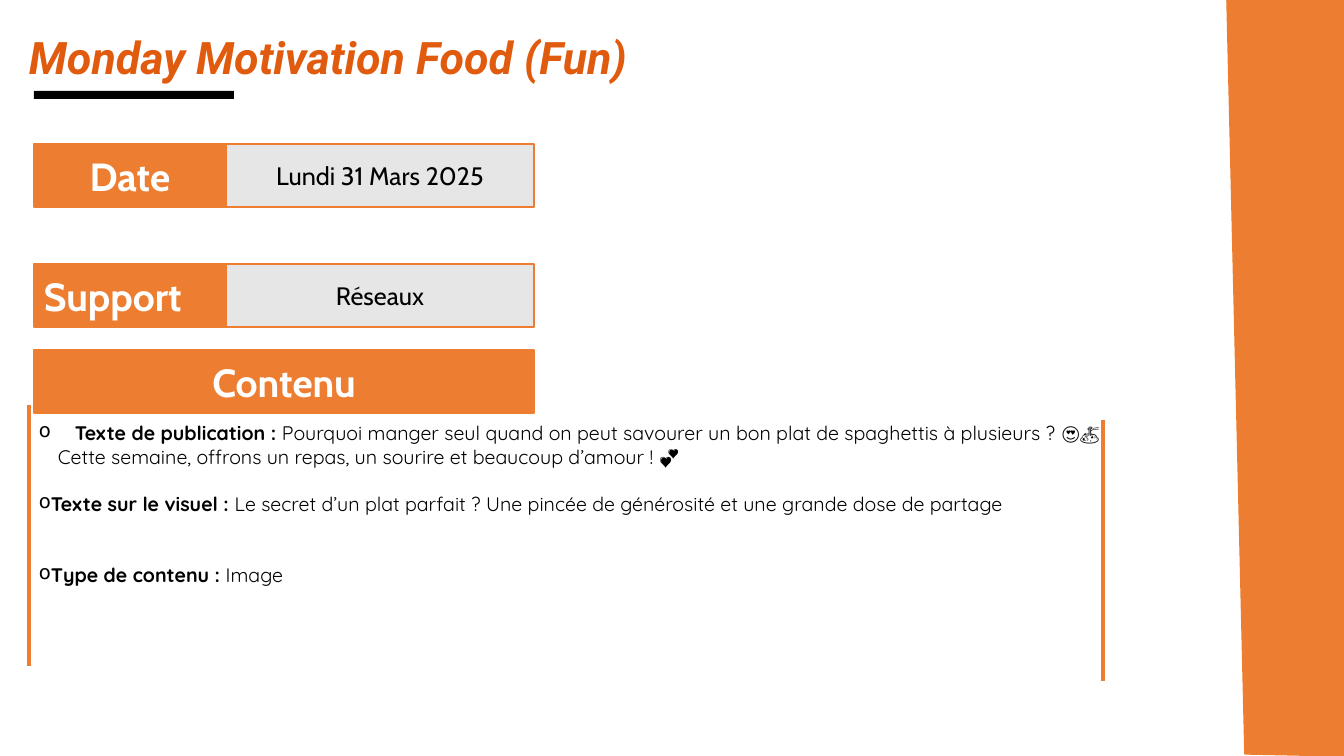
from lxml import etree
from pptx import Presentation
from pptx.dml.color import RGBColor
from pptx.enum.shapes import MSO_CONNECTOR, MSO_SHAPE
from pptx.enum.text import MSO_ANCHOR, PP_ALIGN
from pptx.oxml.ns import qn
from pptx.util import Emu, Pt

PX = 914400 / 100.8
SLIDE_W, SLIDE_H = 1344, 756

ORANGE = RGBColor(0xED, 0x7D, 0x31)
TITLE_ORANGE = RGBColor(0xE1, 0x5B, 0x0F)
GREY = RGBColor(0xE7, 0xE6, 0xE6)
BLACK = RGBColor(0, 0, 0)
WHITE = RGBColor(0xFF, 0xFF, 0xFF)

LEFT, CENTER, JUSTIFY = PP_ALIGN.LEFT, PP_ALIGN.CENTER, PP_ALIGN.JUSTIFY
MIDDLE = MSO_ANCHOR.MIDDLE
RECTANGLE, STRAIGHT = MSO_SHAPE.RECTANGLE, MSO_CONNECTOR.STRAIGHT

LABEL_W, VALUE_W, FIELD_H = 192, 308, 63

# bold lead, text, bullet, left indent (px), space before (pt)
CONTENT = [
    ("Texte de publication : ",
     "Pourquoi manger seul quand on peut savourer un bon plat de spaghettis à plusieurs ? 😍🍝",
     True, 36, 0),
    ("", "Cette semaine, offrons un repas, un sourire et beaucoup d’amour ! 💕",
     False, 19, 0),
    ("Texte sur le visuel : ",
     "Le secret d’un plat parfait ? Une pincée de générosité et une grande dose de partage",
     True, 12, 17),
    ("Type de contenu :", " Image", True, 12, 34),
]


def px(length):
    return Emu(round(length * PX))


def add_text(paragraph, text, *, font, size, color=BLACK, bold=False,
             italic=False, align=LEFT):
    paragraph.alignment = align
    run = paragraph.add_run()
    run.text = text
    run.font.name = font
    run.font.size = Pt(size)
    run.font.color.rgb = color
    run.font.bold = bold
    run.font.italic = italic


def add_bar(slide, x, y, w, h, fill, outline=None):
    bar = slide.shapes.add_shape(RECTANGLE, px(x), px(y), px(w), px(h))
    bar.shadow.inherit = False
    bar.fill.solid()
    bar.fill.fore_color.rgb = fill
    if outline is None:
        bar.line.fill.background()
    else:
        bar.line.color.rgb = outline
        bar.line.width = Pt(1)
    bar.text_frame.vertical_anchor = MIDDLE
    return bar.text_frame


def add_text_area(slide, x, y, w, h):
    frame = slide.shapes.add_textbox(px(x), px(y), px(w), px(h)).text_frame
    frame.word_wrap = True
    return frame


def add_label(slide, x, y, w, text, align=CENTER):
    frame = add_bar(slide, x, y, w, FIELD_H, ORANGE, ORANGE)
    add_text(frame.paragraphs[0], text, font="Cabin", size=28, color=WHITE,
             bold=True, align=align)


def add_field(slide, x, y, label, value, label_align=CENTER):
    """Orange label with its grey value to the right."""
    add_label(slide, x, y, LABEL_W, label, label_align)
    frame = add_bar(slide, x + LABEL_W, y, VALUE_W, FIELD_H, GREY, ORANGE)
    add_text(frame.paragraphs[0], value, font="Cabin", size=18, align=CENTER)


def add_side_band(slide, x, y, w, h):
    """Slanted band along the right edge."""
    builder = slide.shapes.build_freeform(x, y, scale=PX)
    builder.add_line_segments([(x + w, y), (x + w, y + h), (x + 18, y + h - 2)])
    band = builder.convert_to_shape()
    band.shadow.inherit = False
    band.fill.solid()
    band.fill.fore_color.rgb = ORANGE
    band.line.color.rgb = ORANGE
    band.line.width = Pt(1)


def add_title(slide, x, y, w, h):
    frame = add_text_area(slide, x, y, w, h)
    add_text(frame.paragraphs[0], "Monday Motivation Food (Fun)", font="Roboto",
             size=32, color=TITLE_ORANGE, bold=True, italic=True, align=JUSTIFY)
    add_bar(slide, x + 15, y + 66, 200, 8, BLACK)


def add_rule(slide, x, y, h):
    rule = slide.shapes.add_connector(STRAIGHT, px(x), px(y), px(x), px(y + h))
    rule.line.color.rgb = ORANGE
    rule.line.width = Pt(2.25)
    etree.SubElement(rule._element.spPr, qn("a:effectLst"))


def set_indent(paragraph, indent, bullet):
    properties = paragraph._p.get_or_add_pPr()
    properties.set("marL", str(px(indent)))
    properties.set("indent", str(-px(indent) if bullet else 0))
    if bullet:
        etree.SubElement(properties, qn("a:buChar")).set("char", "o")


def add_content(slide, x, y, w, h):
    """Bulleted content between two vertical rules."""
    add_rule(slide, x, y - 11, 261)
    add_rule(slide, x + 1074, y + 4, 261)
    frame = add_text_area(slide, x, y, w, h)
    for i, (lead, text, bullet, indent, gap) in enumerate(CONTENT):
        paragraph = frame.add_paragraph() if i else frame.paragraphs[0]
        set_indent(paragraph, indent, bullet)
        if gap:
            paragraph.space_before = Pt(gap)
        if lead:
            add_text(paragraph, lead, font="Quicksand", size=14, bold=True)
        add_text(paragraph, text, font="Quicksand", size=14)


def main():
    prs = Presentation()
    prs.slide_width, prs.slide_height = px(SLIDE_W), px(SLIDE_H)
    slide = prs.slides.add_slide(prs.slide_layouts[6])
    add_side_band(slide, 1227, 0, SLIDE_W - 1227, SLIDE_H)
    add_title(slide, 19, 25, 1112, 52)
    add_field(slide, 34, 144, "Date", "Lundi 31 Mars 2025")
    add_field(slide, 34, 264, "Support", "Réseaux", LEFT)
    add_content(slide, 29, 416, 1091, 221)
    add_label(slide, 34, 350, LABEL_W + VALUE_W, "Contenu")
    prs.save("out.pptx")


if __name__ == "__main__":
    main()
